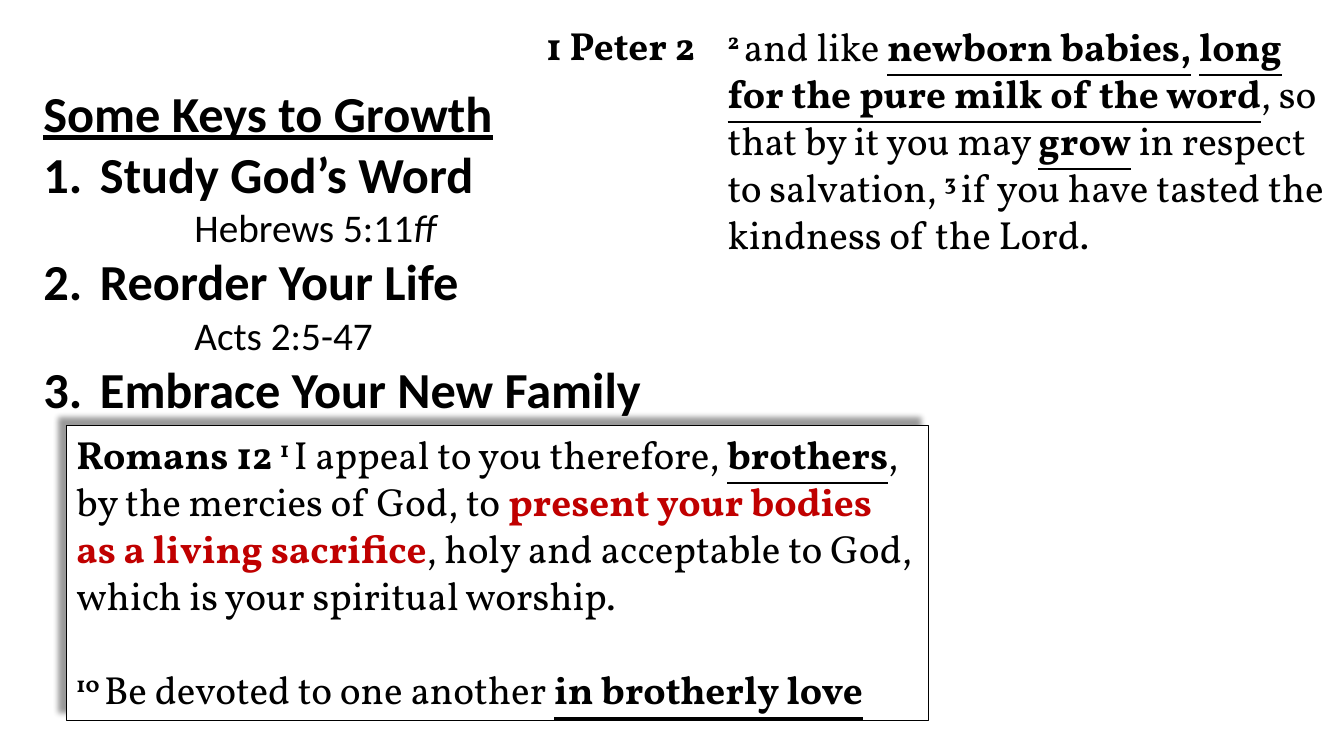
from dataclasses import dataclass

from lxml import etree
from pptx import Presentation
from pptx.dml.color import RGBColor
from pptx.enum.shapes import MSO_SHAPE
from pptx.enum.text import MSO_ANCHOR, MSO_AUTO_SIZE, PP_ALIGN
from pptx.oxml.ns import qn
from pptx.util import Pt

RECTANGLE = MSO_SHAPE.RECTANGLE
LEFT = PP_ALIGN.LEFT
TOP = MSO_ANCHOR.TOP
FIT_SHAPE = MSO_AUTO_SIZE.SHAPE_TO_FIT_TEXT


@dataclass(frozen=True)
class Theme:
    black: RGBColor = RGBColor(0, 0, 0)
    white: RGBColor = RGBColor(255, 255, 255)
    red: RGBColor = RGBColor(0xC0, 0, 0)
    keys_font: str = "Calibri"
    verse_font: str = "Vollkorn"
    heading_size: float = 36
    text_size: float = 28
    verse_line: float = 33.6


THEME = Theme()


@dataclass(frozen=True)
class Span:
    text: str
    bold: bool = False
    underline: bool = False
    italic: bool = False
    raised: bool = False
    color: RGBColor = THEME.black


@dataclass(frozen=True)
class Para:
    spans: list[Span]
    size: float = THEME.text_size
    level: int = 0
    margin: float = 0
    numbered: bool = False
    space_before: float = 0


@dataclass(frozen=True)
class Box:
    left: float
    top: float
    width: float
    height: float
    paras: list[Para]
    font: str = THEME.verse_font
    filled: bool = False
    framed: bool = False


def key(text: str) -> Para:
    return Para([Span(text, bold=True)], THEME.heading_size, margin=40.5, numbered=True)


def reference(*spans: Span) -> Para:
    return Para(list(spans), level=1, margin=108)


def verse_number(text: str) -> Span:
    return Span(text, bold=True, raised=True)


def stressed(text: str) -> Span:
    return Span(text, bold=True, underline=True)


PETER_VERSES = Box(512.6, 12.2, 447.1, 177.1, [Para([
    verse_number("2 "),
    Span("and like "),
    stressed("newborn babies,"),
    Span(" "),
    stressed("long for the pure milk of the word"),
    Span(", so that by it you may "),
    stressed("grow"),
    Span(" in respect to salvation, "),
    verse_number("3 "),
    Span("if you have tasted the kindness of the Lord."),
])])

PETER_LABEL = Box(383, 11.5, 128.2, 41, [Para([Span("1 Peter 2", bold=True)])], filled=True)

GROWTH_KEYS = Box(23.8, 55.4, 892.1, 249.8, [
    Para([stressed("Some Keys to Growth")], THEME.heading_size),
    key("Study God’s Word"),
    reference(Span("Hebrews 5:11"), Span("ff", italic=True)),
    key("Reorder Your Life"),
    reference(Span("Acts 2:5-47")),
    key("Embrace Your New Family"),
], font=THEME.keys_font)

ROMANS_VERSES = Box(47.5, 303.8, 615.6, 211, [
    Para([
        Span("Romans 12 ", bold=True),
        verse_number("1 "),
        Span("I appeal to you therefore, "),
        stressed("brothers"),
        Span(", by the mercies of God, to "),
        Span("present your bodies as a living sacrifice", bold=True, color=THEME.red),
        Span(", holy and acceptable to God, which is your spiritual worship."),
    ]),
    Para([
        verse_number("10 "),
        Span("Be devoted to one another "),
        stressed("in brotherly love"),
    ], space_before=THEME.verse_line),
], filled=True, framed=True)


def add_span(p, span: Span, size: float, font: str) -> None:
    r = p.add_run()
    r.text = span.text
    r.font.name = font
    r.font.size = Pt(size)
    r.font.bold = span.bold
    r.font.italic = span.italic
    r.font.underline = span.underline
    r.font.color.rgb = span.color
    if span.raised:
        r.font._element.set("baseline", "30000")


def format_para(p, para: Para) -> None:
    p.alignment = LEFT
    p.level = para.level
    p.space_before = Pt(para.space_before)
    pPr = p._p.get_or_add_pPr()
    pPr.set("marL", str(Pt(para.margin)))
    pPr.set("indent", str(-Pt(para.margin) if para.numbered else 0))
    if para.numbered:
        etree.SubElement(pPr, qn("a:buFont"), typeface="+mj-lt")
        etree.SubElement(pPr, qn("a:buAutoNum"), type="arabicPeriod")


def add_shadow(sp) -> None:
    effects = sp._element.spPr.find(qn("a:effectLst"))
    shadow = etree.SubElement(effects, qn("a:outerShdw"), blurRad=str(Pt(4)),
                              dist=str(Pt(8)), dir=str(225 * 60000),
                              algn="br", rotWithShape="0")
    color = etree.SubElement(shadow, qn("a:srgbClr"), val=str(THEME.black))
    etree.SubElement(color, qn("a:alpha"), val="40000")


def add_box(s, box: Box) -> None:
    place = Pt(box.left), Pt(box.top), Pt(box.width), Pt(box.height)
    if box.filled:
        sp = s.shapes.add_shape(RECTANGLE, *place)
        sp.fill.solid()
        sp.fill.fore_color.rgb = THEME.white
        if box.framed:
            sp.line.color.rgb = THEME.black
            sp.line.width = Pt(0.75)
        else:
            sp.line.fill.background()
        sp.shadow.inherit = False
        if box.framed:
            add_shadow(sp)
    else:
        sp = s.shapes.add_textbox(*place)
    tf = sp.text_frame
    tf.word_wrap = True
    tf.auto_size = FIT_SHAPE
    tf.vertical_anchor = TOP
    for i, para in enumerate(box.paras):
        p = tf.add_paragraph() if i else tf.paragraphs[0]
        format_para(p, para)
        for span in para.spans:
            add_span(p, span, para.size, box.font)


def main() -> None:
    prs = Presentation()
    prs.slide_width, prs.slide_height = Pt(960), Pt(540)
    s = prs.slides.add_slide(prs.slide_layouts.get_by_name("Blank"))
    for box in (PETER_VERSES, PETER_LABEL, GROWTH_KEYS, ROMANS_VERSES):
        add_box(s, box)
    prs.save("out.pptx")


if __name__ == "__main__":
    main()
